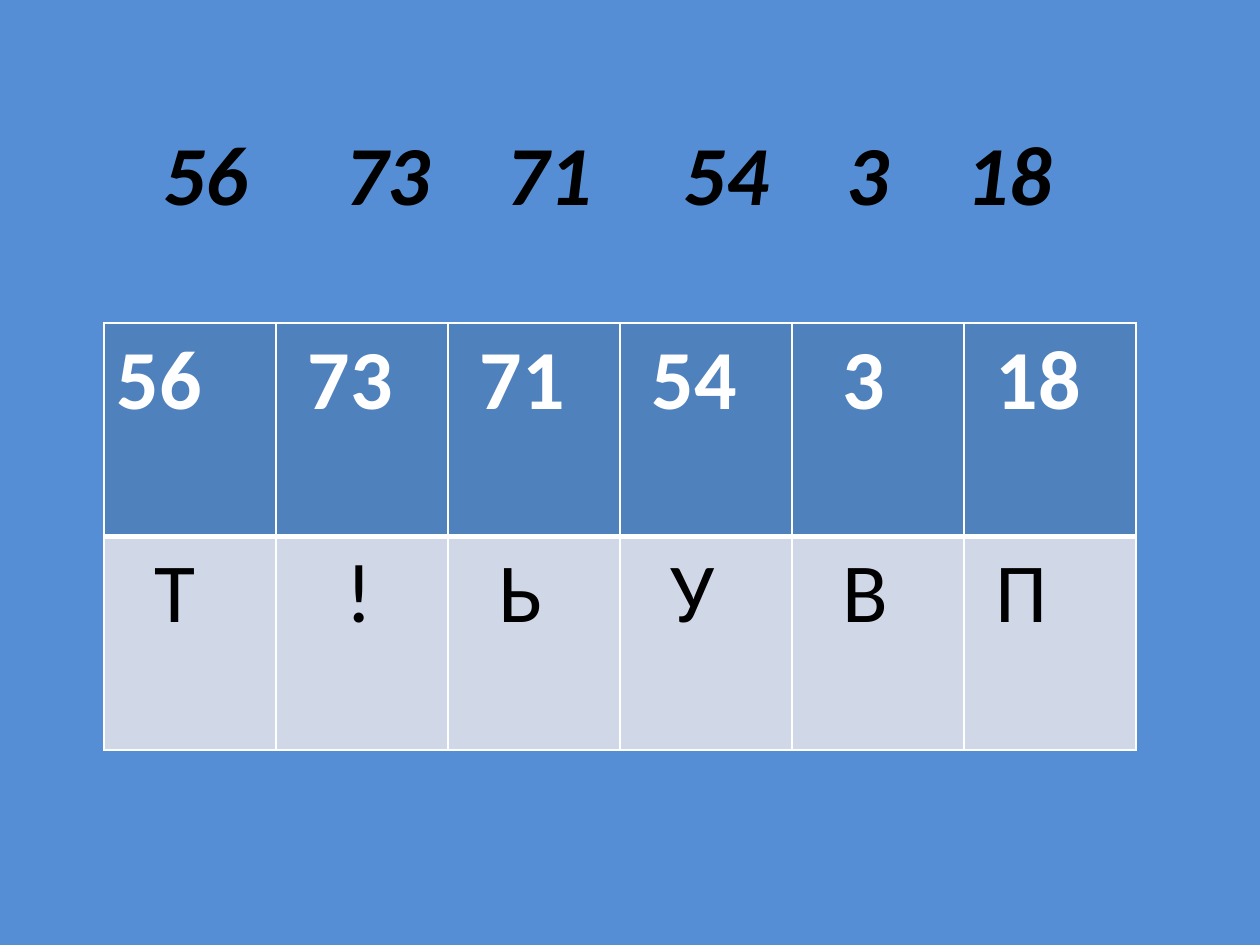
from pptx import Presentation
from pptx.dml.color import RGBColor
from pptx.enum import text
from pptx.oxml import ns, parse_xml
from pptx.util import Pt

PX = 914400 // 126
SKY = RGBColor(0x55, 0x8E, 0xD5)
BLUE = RGBColor(0x4F, 0x81, 0xBD)
PALE = RGBColor(0xD0, 0xD8, 0xE8)
WHITE = RGBColor(0xFF, 0xFF, 0xFF)
BLACK = RGBColor(0, 0, 0)

NUMBERS = ["56", "73", "71", "54", "3", "18"]
LETTERS = ["Т", "!", "Ь", "У", "В", "П"]
NUMBER_STOPS = [0, 182, 344, 521, 684, 804]
NUMBER_INDENTS = [0, 19, 19, 19, 38, 19]
LETTER_INDENTS = [38, 57, 38, 38, 38, 19]


def write(frame, content, color=BLACK, bold=False, italic=False, size=48):
    """Write one left-aligned line into a text frame and return its run."""
    paragraph = frame.paragraphs[0]
    paragraph.alignment = text.PP_ALIGN.LEFT
    run = paragraph.add_run()
    run.text = content
    run.font.size = Pt(size)
    run.font.bold = bold
    run.font.italic = italic
    run.font.color.rgb = color
    run.font.name = "Calibri"
    return run


def add_text_shadow(run):
    """Give a run a soft shadow below and to the right."""
    shadow = parse_xml(
        f'<a:effectLst {ns.nsdecls("a")}>'
        '<a:outerShdw blurRad="38100" dist="38100" dir="2700000" algn="tl">'
        '<a:srgbClr val="000000"><a:alpha val="43000"/></a:srgbClr>'
        '</a:outerShdw></a:effectLst>')
    run.font._element.find(ns.qn("a:solidFill")).addnext(shadow)


def add_tab_stops(paragraph, stops):
    """Set left tab stops, given in px from the edge of the text."""
    tabs = "".join(f'<a:tab pos="{stop * PX}" algn="l"/>' for stop in stops)
    paragraph._p.get_or_add_pPr().append(
        parse_xml(f'<a:tabLst {ns.nsdecls("a")}>{tabs}</a:tabLst>'))


def place_title(slide, left, top, width, height):
    """Set the row of numbers in the title placeholder."""
    title = slide.shapes.title
    title.left, title.top = left * PX, top * PX
    title.width, title.height = width * PX, height * PX
    frame = title.text_frame
    frame.auto_size = text.MSO_AUTO_SIZE.NONE
    frame.word_wrap = True
    frame.vertical_anchor = text.MSO_ANCHOR.MIDDLE
    frame.margin_left = frame.margin_right = 0
    run = write(frame, "\t".join(NUMBERS), bold=True, italic=True)
    add_text_shadow(run)
    add_tab_stops(frame.paragraphs[0], NUMBER_STOPS[1:])


def set_borders(cell, **widths):
    """Draw white cell borders, with widths in points by side."""
    properties = cell._tc.get_or_add_tcPr()
    for index, side in enumerate("LRTB"):
        width = Pt(widths.get(side, 1))
        properties.insert(index, parse_xml(
            f'<a:ln{side} {ns.nsdecls("a")} w="{width}"><a:solidFill>'
            f'<a:srgbClr val="{WHITE}"/></a:solidFill></a:ln{side}>'))


def add_key_table(slide, left, top, width, height):
    """Add the table that pairs each number with its letter."""
    rows = [
        (NUMBERS, NUMBER_INDENTS, BLUE, WHITE, True, {"B": 3}),
        (LETTERS, LETTER_INDENTS, PALE, BLACK, False, {"T": 3}),
    ]
    table = slide.shapes.add_table(
        len(rows), len(NUMBERS), left * PX, top * PX, width * PX, height * PX).table
    for row, (labels, indents, fill, color, bold, borders) in enumerate(rows):
        for column, (label, indent) in enumerate(zip(labels, indents)):
            cell = table.cell(row, column)
            cell.fill.solid()
            cell.fill.fore_color.rgb = fill
            cell.margin_left = (13 + indent) * PX
            write(cell.text_frame, label, color=color, bold=bold)
            set_borders(cell, **borders)


def main():
    """Build the slide and save it."""
    presentation = Presentation()
    presentation.slide_width = 1260 * PX
    presentation.slide_height = 945 * PX
    slide = presentation.slides.add_slide(presentation.slide_layouts[5])
    slide.background.fill.solid()
    slide.background.fill.fore_color.rgb = SKY
    place_title(slide, 163, 112, 940, 120)
    add_key_table(slide, 104, 323, 1032, 427)
    presentation.save("out.pptx")


if __name__ == "__main__":
    main()
